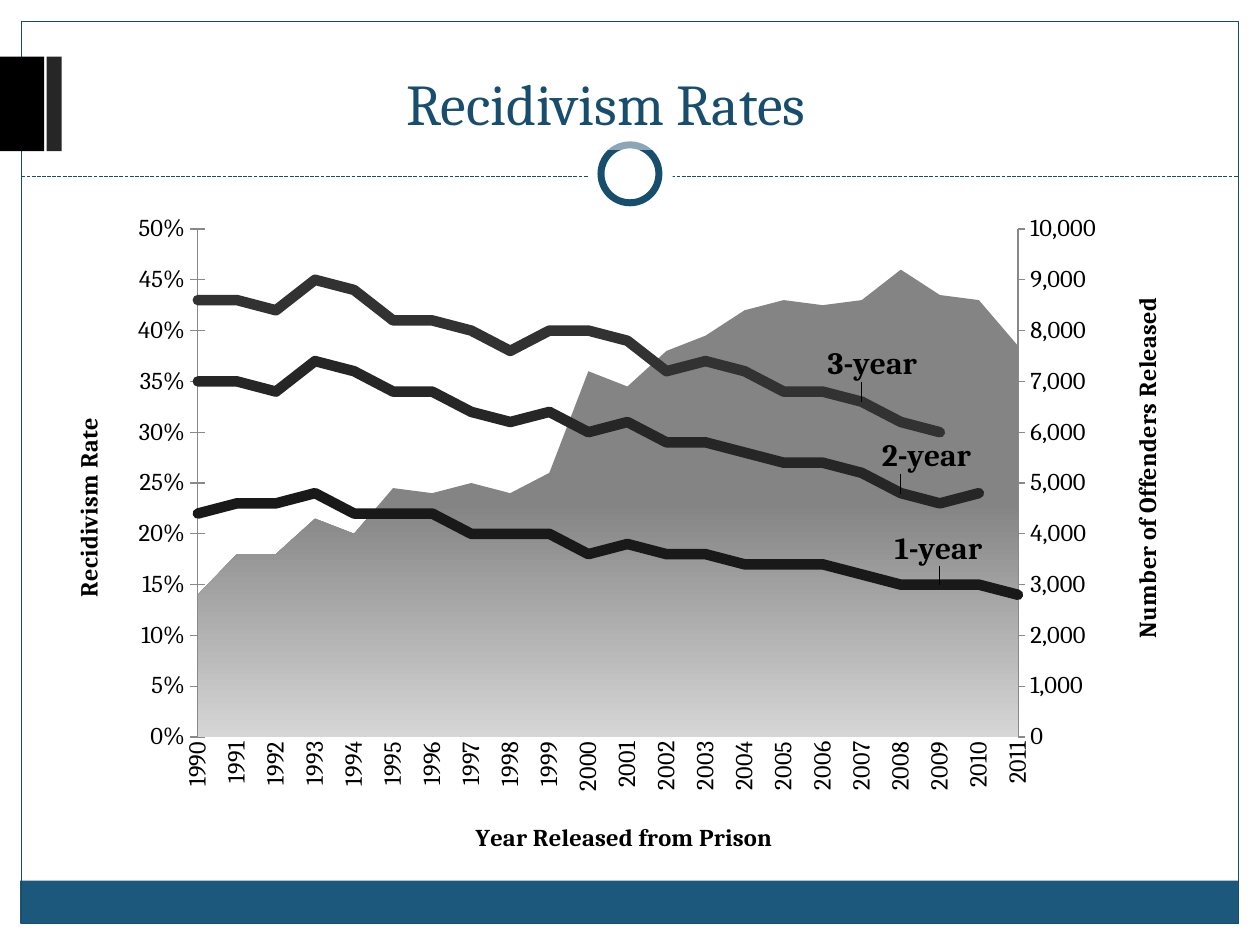
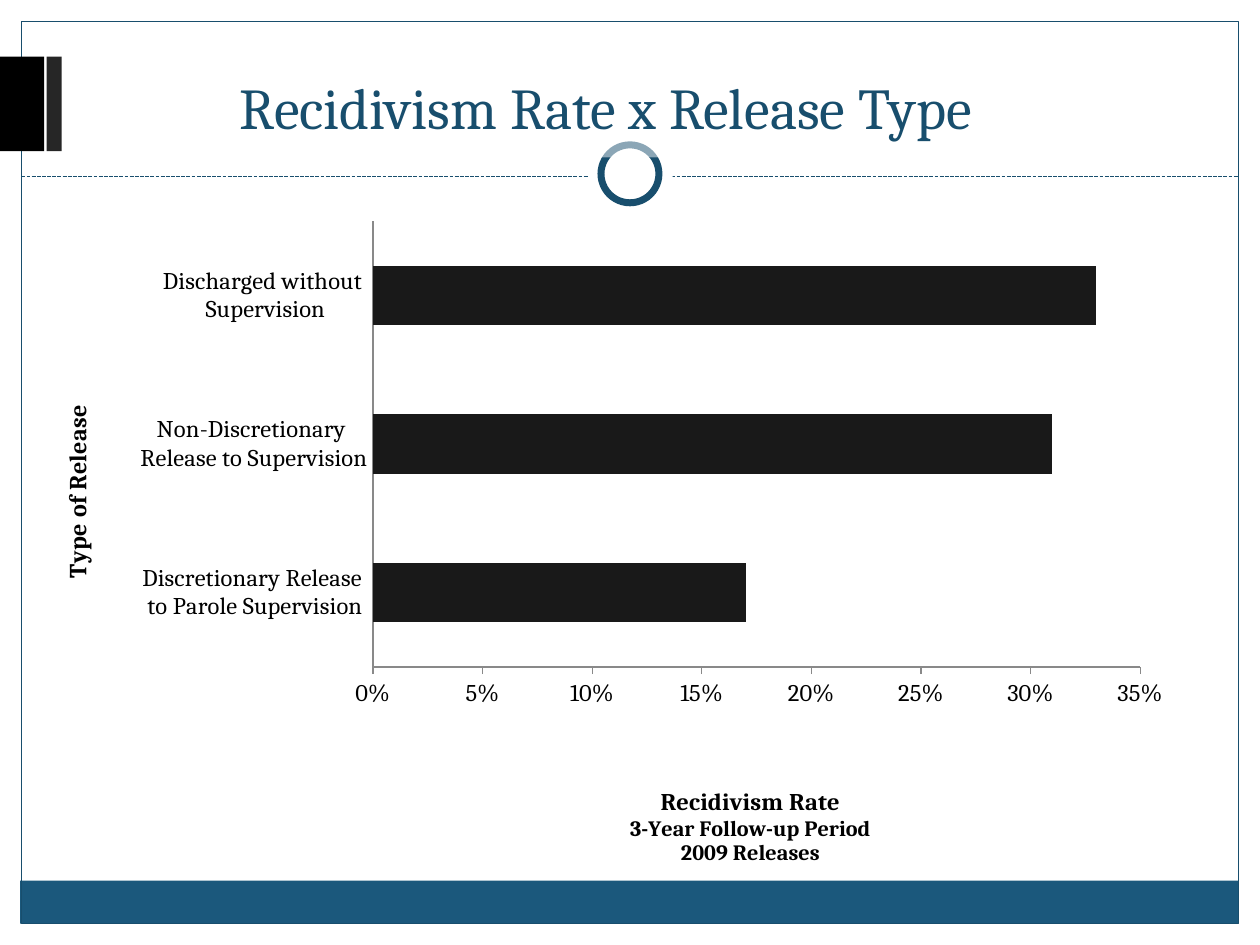
from copy import deepcopy
from pptx import Presentation
from pptx.chart.axis import ValueAxis
from pptx.chart.data import CategoryChartData
from pptx.dml.color import RGBColor
from pptx.enum.chart import XL_CHART_TYPE, XL_TICK_LABEL_POSITION, XL_TICK_MARK
from pptx.enum.dml import MSO_LINE
from pptx.enum.shapes import MSO_CONNECTOR, MSO_SHAPE
from pptx.enum.text import MSO_ANCHOR, PP_ALIGN
from pptx.oxml import parse_xml
from pptx.oxml.ns import nsdecls, qn
from pptx.util import Inches, Pt

FONT = "Cambria"
HUES = {
    "white": "FFFFFF", "black": "000000", "navy": "184E6D", "band": "1B587C",
    "tab": "262626", "axis": "898989", "area": "848484", "pale": "D6D6D6",
    "one": "191919", "two": "262626", "three": "323232",
}
RGB = {name: RGBColor.from_string(code) for name, code in HUES.items()}


def write(frame, text, size=14, rest=None, bold=False, hue="black"):
    for i, line in enumerate(text.split("\n")):
        para = frame.add_paragraph() if i else frame.paragraphs[0]
        para.alignment = PP_ALIGN.CENTER
        run = para.add_run()
        run.text = line
        run.font.name = FONT
        run.font.size = Pt(rest if i and rest else size)
        run.font.bold = bold
        run.font.color.rgb = RGB[hue]


def pin(node, spot, frame, at=0):
    for old in node.findall(qn("c:layout")):
        node.remove(old)
    left, top, width, height = frame
    parts = [(spot[0] - left) / width, (spot[1] - top) / height]
    if len(spot) == 4:
        parts += [spot[2] / width, spot[3] / height]
    sizes = "".join(f'<c:{k} val="{v:.4f}"/>' for k, v in zip("xywh", parts))
    target = '<c:layoutTarget val="inner"/>' if len(spot) == 4 else ""
    node.insert(at, parse_xml(
        f'<c:layout {nsdecls("c")}><c:manualLayout>{target}<c:xMode val="edge"/>'
        f'<c:yMode val="edge"/>{sizes}</c:manualLayout></c:layout>'))


deck = Presentation()
deck.slide_width, deck.slide_height = Inches(10), Inches(7.5)

BOX, RING = MSO_SHAPE.RECTANGLE, MSO_SHAPE.OVAL
BACK = [
    (BOX, (0, 0, 10, 1.52), "white", None, 0),
    (BOX, (0, 0, 0.17, 7.5), "white", None, 0),
    (BOX, (9.83, 0, 0.17, 7.5), "white", None, 0),
    (BOX, (0.16, 6.99, 9.67, 0.34), "band", None, 0),
    (BOX, (0.17, 0.17, 9.66, 7.16), None, "navy", 0.75),
]
FRONT = [
    (RING, (4.67, 1.05, 0.67, 0.67), "white", None, 0),
    (RING, (4.77, 1.15, 0.46, 0.46), "white", "navy", 4),
    (BOX, (0, 0.45, 0.35, 0.75), "black", None, 0),
    (BOX, (0.37, 0.45, 0.12, 0.75), "tab", None, 0),
]

slides = []
for title, tall in [("Recidivism Rates", 0.75),
                    ("Recidivism Rate x Release Type", 0.81)]:
    slide = deck.slides.add_slide(deck.slide_layouts[6])
    slides.append(slide)
    for part in BACK + [None] + FRONT:
        if part is None:
            rule = slide.shapes.add_connector(
                MSO_CONNECTOR.STRAIGHT, Inches(0.17), Inches(1.4),
                Inches(9.83), Inches(1.4))
            rule.line.color.rgb = RGB["navy"]
            rule.line.width = Pt(0.75)
            rule.line.dash_style = MSO_LINE.SQUARE_DOT
            rule._element.spPr.append(parse_xml(f'<a:effectLst {nsdecls("a")}/>'))
            continue
        kind, spot, fill, edge, thick = part
        shape = slide.shapes.add_shape(kind, *map(Inches, spot))
        shape.shadow.inherit = False
        if fill:
            shape.fill.solid()
            shape.fill.fore_color.rgb = RGB[fill]
        else:
            shape.fill.background()
        if edge:
            shape.line.color.rgb = RGB[edge]
            shape.line.width = Pt(thick)
        else:
            shape.line.fill.background()
    head = slide.shapes.add_textbox(
        Inches(0.56), Inches(0.44), Inches(8.5), Inches(tall))
    head.fill.solid()
    head.fill.fore_color.rgb = RGB["white"]
    tint = head._element.spPr.find(".//" + qn("a:srgbClr"))
    tint.append(parse_xml(f'<a:alpha {nsdecls("a")} val="50000"/>'))
    head.text_frame.word_wrap = True
    head.text_frame.vertical_anchor = MSO_ANCHOR.MIDDLE
    write(head.text_frame, title, size=33, hue="navy")

freed = [2800, 3600, 3600, 4300, 4000, 4900, 4800, 5000, 4800, 5200, 7200,
         6900, 7600, 7900, 8400, 8600, 8500, 8600, 9200, 8700, 8600, 7700]
rates = {
    "1-year": [22, 23, 23, 24, 22, 22, 22, 20, 20, 20, 18,
               19, 18, 18, 17, 17, 17, 16, 15, 15, 15, 14],
    "2-year": [35, 35, 34, 37, 36, 34, 34, 32, 31, 32, 30,
               31, 29, 29, 28, 27, 27, 26, 24, 23, 24],
    "3-year": [43, 43, 42, 45, 44, 41, 41, 40, 38, 40,
               40, 39, 36, 37, 36, 34, 34, 33, 31, 30],
}
data = CategoryChartData()
data.categories = [str(year) for year in range(1990, 2012)]
data.add_series("Series 1", freed)
for name, row in rates.items():
    gap = [None] * (len(freed) - len(row))
    data.add_series(name, [rate / 100 for rate in row] + gap)
wide = (0.5, 1.68, 9, 5.15)
trend = slides[0].shapes.add_chart(
    XL_CHART_TYPE.LINE, *map(Inches, wide), data).chart

bars = CategoryChartData()
bars.categories = ["Discretionary Release \nto Parole Supervision",
                   "Non-Discretionary \nRelease to Supervision",
                   "Discharged without \nSupervision"]
bars.add_series("Series 1", [0.17, 0.31, 0.33])
low = (0.42, 1.67, 9, 5.25)
types = slides[1].shapes.add_chart(
    XL_CHART_TYPE.BAR_CLUSTERED, *map(Inches, low), bars).chart

for chart, frame, spot in [(trend, wide, (1.57, 1.82, 6.51, 4.1)),
                           (types, low, (2.96, 1.76, 6.09, 3.6))]:
    chart.has_legend = False
    chart.has_title = False
    chart.font.name = FONT
    chart.font.size = Pt(10)
    chart.font.color.rgb = RGB["black"]
    chart.plots[0].vary_by_categories = False
    pin(chart._chartSpace.chart.plotArea, spot, frame)

plot = trend.plots[0]
body, *lines = plot.series
body.format.fill.gradient()
body.format.fill.gradient_angle = 270
for stop, hue, place in zip(body.format.fill.gradient_stops,
                            ("area", "pale"), (0.5, 1)):
    stop.color.rgb = RGB[hue]
    stop.position = place
body.format.line.fill.background()

FLAGS = ("LegendKey", "Val", "CatName", "SerName", "Percent", "BubbleSize")
hide = "".join(f'<c:show{flag} val="0"/>' for flag in FLAGS)
show = hide.replace('SerName val="0"', 'SerName val="1"')
marks = [("one", 19, -0.4, -0.29), ("two", 18, -0.19, -0.3),
         ("three", 17, -0.31, -0.3)]
for line, (hue, point, dx, dy) in zip(lines, marks):
    line.smooth = False
    line.format.line.color.rgb = RGB[hue]
    line.format.line.width = Pt(6)
    pen = line._element.spPr.find(qn("a:ln"))
    pen.set("cap", "rnd")
    pen.append(parse_xml(f'<a:round {nsdecls("a")}/>'))
    label = parse_xml(
        f'<c:dLbls {nsdecls("c", "a")}><c:dLbl><c:idx val="{point}"/>'
        f'<c:layout><c:manualLayout><c:x val="{dx / wide[2]:.4f}"/>'
        f'<c:y val="{dy / wide[3]:.4f}"/></c:manualLayout></c:layout>'
        '<c:spPr><a:noFill/><a:ln><a:noFill/></a:ln></c:spPr>'
        '<c:txPr><a:bodyPr/><a:p><a:pPr><a:defRPr sz="1800" b="1">'
        f'<a:solidFill><a:srgbClr val="{HUES["black"]}"/></a:solidFill>'
        f'<a:latin typeface="{FONT}"/></a:defRPr></a:pPr></a:p></c:txPr>'
        f'<c:dLblPos val="r"/>{show}</c:dLbl>{hide}<c:extLst>'
        '<c:ext uri="{CE6537A1-D6FC-4f65-9D91-7224C49458BB}" '
        'xmlns:c15="http://schemas.microsoft.com/office/drawing/2012/chart">'
        '<c15:showLeaderLines val="1"/></c:ext></c:extLst></c:dLbls>')
    line._element.find(qn("c:cat")).addprevious(label)

cat, right = trend.category_axis, trend.value_axis
ids = {}
for axis in (cat, right):
    key = axis._element.find(qn("c:axId")).get("val")
    ids[key] = str(5000 + len(ids))
cat.visible = False
twins = [deepcopy(axis._element) for axis in (cat, right)]
cat.visible = True
right._element.addnext(twins[0])
twins[0].addprevious(twins[1])
for twin in twins:
    for tag in ("c:axId", "c:crossAx"):
        item = twin.find(qn(tag))
        item.set("val", ids[item.get("val")])
left = ValueAxis(twins[1])
for axis, side, cross in [(left, "l", "min"), (right, "r", "max")]:
    for tag, value in [("c:axPos", side), ("c:crosses", cross),
                       ("c:crossBetween", "midCat")]:
        for item in axis._element.findall(qn(tag)):
            item.set("val", value)
right.tick_label_position = XL_TICK_LABEL_POSITION.HIGH

group = plot._element
area = parse_xml(f'<c:areaChart {nsdecls("c")}><c:grouping val="standard"/>'
                 '<c:varyColors val="0"/></c:areaChart>')
group.addprevious(area)
area.append(body._element)
for tag in ("c:marker", "c:smooth"):
    for item in body._element.findall(qn(tag)):
        body._element.remove(item)
for item in group.findall(qn("c:axId")):
    area.append(deepcopy(item))
    item.set("val", ids[item.get("val")])

solid = types.plots[0]
solid.gap_width = 150
solid.series[0].format.fill.solid()
solid.series[0].format.fill.fore_color.rgb = RGB["one"]

TICK = XL_TICK_MARK
AXES = [
    (cat, wide, "Year Released from Prison", (3.74, 6.57), 0, TICK.NONE, None),
    (left, wide, "Recidivism Rate", (0.54, 3.33), -90, TICK.CROSS,
     (0.5, 0.05, "0%")),
    (right, wide, "Number of Offenders Released", (8.94, 2.38), -90,
     TICK.OUTSIDE, (10000, 1000, "#,##0")),
    (types.category_axis, low, "Type of Release", (0.45, 3.23), -90,
     TICK.NONE, None),
    (types.value_axis, low,
     "Recidivism Rate\n3-Year Follow-up Period\n2009 Releases", (4.97, 6.29),
     0, TICK.OUTSIDE, (0.35, 0.05, "0%")),
]
for axis, frame, title, spot, turn, tick, scale in AXES:
    axis.has_major_gridlines = False
    axis.major_tick_mark = tick
    axis.minor_tick_mark = TICK.NONE
    axis.format.line.color.rgb = RGB["axis"]
    axis.format.line.width = Pt(0.75)
    font = axis.tick_labels.font
    font.name, font.size = FONT, Pt(14)
    font.color.rgb = RGB["black"]
    if scale:
        axis.minimum_scale = 0
        axis.maximum_scale, axis.major_unit, code = scale
        axis.tick_labels.number_format = code
        axis.tick_labels.number_format_is_linked = False
    text = axis.axis_title.text_frame
    write(text, title, rest=12.7, bold=True)
    text._txBody.find(qn("a:bodyPr")).set("rot", str(turn * 60000))
    pin(axis._element.find(qn("c:title")), spot, frame, at=1)

cat.format.line.fill.background()
turned = cat._element.find(qn("c:txPr")).find(qn("a:bodyPr"))
turned.set("rot", "-5400000")
turned.set("vert", "horz")

deck.save("out.pptx")
